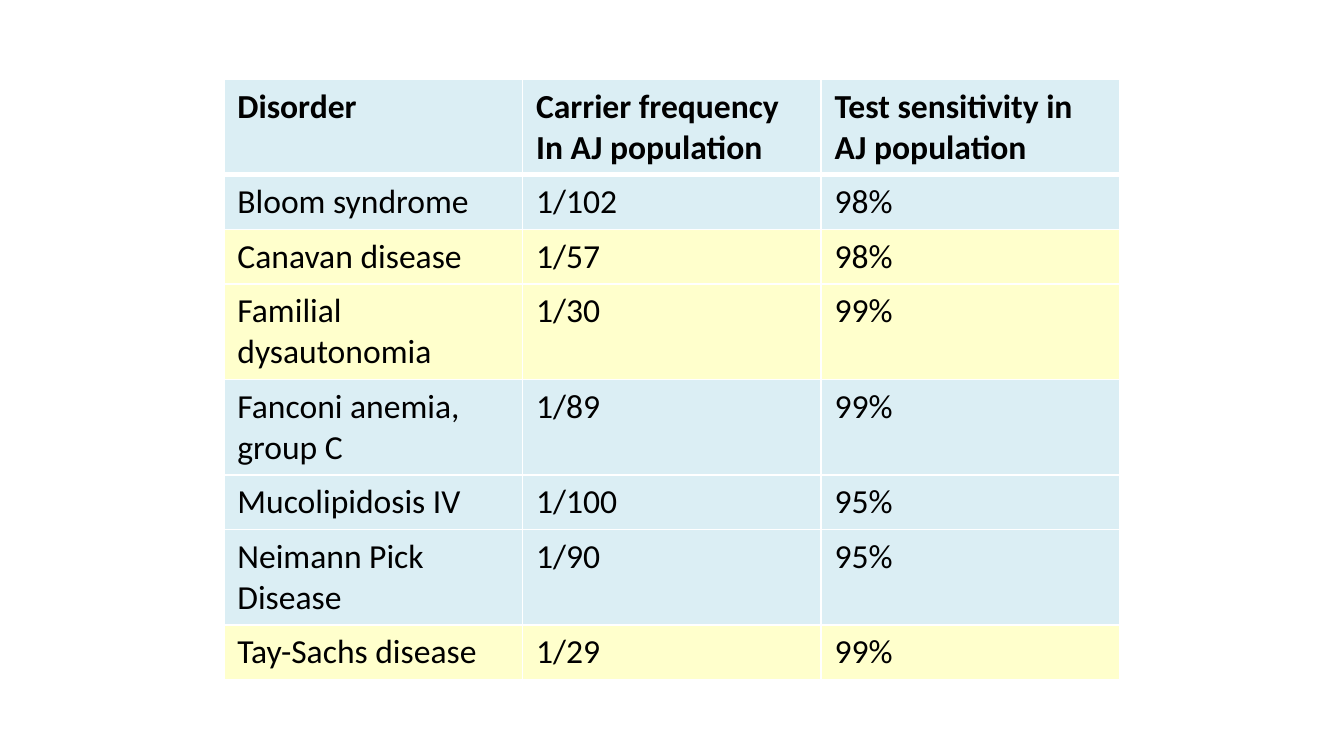
from lxml.etree import SubElement
from pptx import Presentation
from pptx.dml.color import RGBColor
from pptx.oxml.ns import qn
from pptx.util import Pt

BLUE = RGBColor(0xDB, 0xEE, 0xF4)
YELLOW = RGBColor(0xFF, 0xFF, 0xCC)
BLACK = RGBColor(0, 0, 0)
WHITE = RGBColor(0xFF, 0xFF, 0xFF)
FONT = "Calibri"
ROW_HEIGHT = 29.2

# Each row: fill, then the cell texts; a line break starts a new paragraph
ROWS = [
    (BLUE, "Disorder", "Carrier frequency\nIn AJ population",
     "Test sensitivity in AJ population"),
    (BLUE, "Bloom syndrome", "1/102", "98%"),
    (YELLOW, "Canavan disease", "1/57", "98%"),
    (YELLOW, "Familial dysautonomia", "1/30", "99%"),
    (BLUE, "Fanconi anemia, group C", "1/89", "99%"),
    (BLUE, "Mucolipidosis IV", "1/100", "95%"),
    (BLUE, "Neimann Pick Disease", "1/90", "95%"),
    (YELLOW, "Tay-Sachs disease", "1/29", "99%"),
]


def add_borders(cell, top, bottom):
    """Draw white cell borders; call before setting the fill."""
    properties = cell._tc.get_or_add_tcPr()
    for side, width in (("L", 1), ("R", 1), ("T", top), ("B", bottom)):
        line = SubElement(properties, qn(f"a:ln{side}"), w=str(Pt(width)))
        fill = SubElement(line, qn("a:solidFill"))
        SubElement(fill, qn("a:srgbClr"), val=str(WHITE))


def write_cell(cell, text, bold):
    frame = cell.text_frame
    for index, words in enumerate(text.split("\n")):
        para = frame.add_paragraph() if index else frame.paragraphs[0]
        span = para.add_run()
        span.text = words
        span.font.name = FONT
        span.font.size = Pt(18)
        span.font.bold = bold
        span.font.color.rgb = BLACK


def add_disorder_table(page, left, top, width, height):
    frame = page.shapes.add_table(len(ROWS), len(ROWS[0]) - 1, Pt(left),
                                  Pt(top), Pt(width), Pt(height))
    table = frame.table
    for row_index, (color, *texts) in enumerate(ROWS):
        # Rows grow from this height to hold wrapped text
        table.rows[row_index].height = Pt(ROW_HEIGHT)
        for column, text in enumerate(texts):
            cell = table.cell(row_index, column)
            # A heavier rule separates the header from the body
            add_borders(cell, top=3 if row_index == 1 else 1,
                        bottom=3 if row_index == 0 else 1)
            cell.fill.solid()
            cell.fill.fore_color.rgb = color
            write_cell(cell, text, bold=row_index == 0)
    frame.height = Pt(height)


def main():
    deck = Presentation()
    deck.slide_width, deck.slide_height = Pt(720), Pt(405)
    page = deck.slides.add_slide(deck.slide_layouts[6])
    add_disorder_table(page, 120, 42.5, 480, 318)
    deck.save("out.pptx")


if __name__ == "__main__":
    main()
